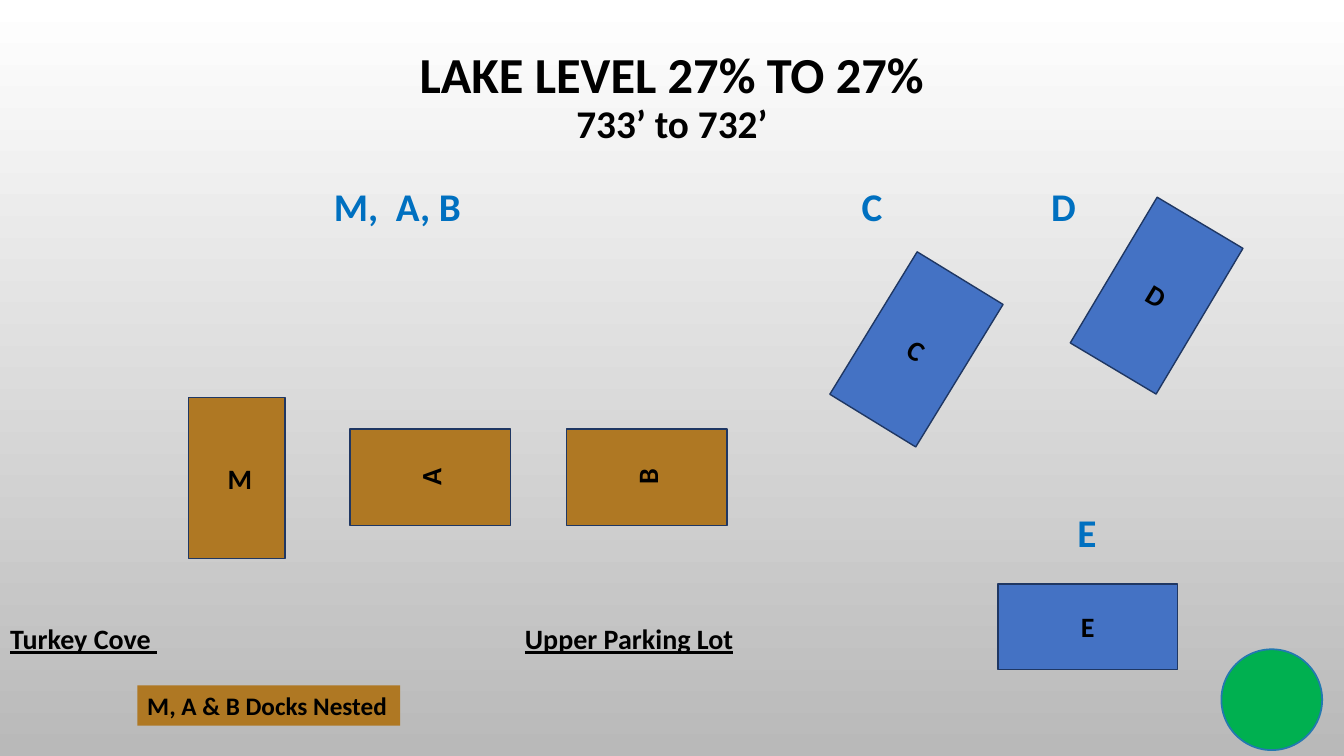
from pptx import Presentation
from pptx.dml.color import RGBColor
from pptx.enum.shapes import MSO_SHAPE as Form
from pptx.enum.text import MSO_ANCHOR as Anchor, PP_ALIGN as Align
from pptx.util import Inches, Pt

BLACK, BLUE, BROWN, DOCK, EDGE = "000000", "0070C0", "AF7823", "4472C4", "1F3763"


def paint(hue):
    return RGBColor.from_string(hue)


class Board:
    """Style and current slide; the grid has 160 columns and 90 rows."""

    font = "Calibri"
    cols, rows = 160, 90

    def __init__(self, deck):
        self.wide, self.high = deck.slide_width, deck.slide_height
        self.slide = deck.slides.add_slide(deck.slide_layouts[6])

    def area(self, x, y, w, h):
        """Box centred on column x and row y."""
        col, row = self.wide / self.cols, self.high / self.rows
        return [round(n) for n in
                ((x - w / 2) * col, (y - h / 2) * row, w * col, h * row)]

    def fade(self, top, low):
        fill = self.slide.background.fill
        fill.gradient()
        fill.gradient_angle = 270
        for stop, hue, pos in zip(fill.gradient_stops, (top, low), (0, 1)):
            stop.color.rgb = paint(hue)
            stop.position = pos

    def letter(self, shape, text, sizes, hue, align, under=False):
        frame = shape.text_frame
        frame.text = text
        frame.word_wrap = True
        frame.vertical_anchor = Anchor.MIDDLE
        para = frame.paragraphs[0]
        para.alignment = align
        for run, size in zip(para.runs, sizes):
            face = run.font
            face.name, face.size, face.bold = self.font, Pt(size), True
            face.underline = under
            face.color.rgb = paint(hue)
        return para

    def label(self, text, spot, sizes=(28,), hue=BLUE, align=Align.CENTER,
              under=False):
        box = self.slide.shapes.add_textbox(*self.area(*spot))
        frame = box.text_frame
        frame.margin_left = frame.margin_right = 0
        frame.margin_top = frame.margin_bottom = 0
        return self.letter(box, text, sizes, hue, align, under)

    def block(self, spot, fill, text="", size=20, turn=0, edge=EDGE, width=1,
              form=Form.RECTANGLE, align=Align.CENTER):
        shape = self.slide.shapes.add_shape(form, *self.area(*spot))
        shape.shadow.inherit = False
        shape.rotation = turn
        shape.fill.solid()
        shape.fill.fore_color.rgb = paint(fill)
        if edge:
            shape.line.color.rgb = paint(edge)
            shape.line.width = Pt(width)
        else:
            shape.line.fill.background()
        if text:
            self.letter(shape, text, (size,), BLACK, align)


def main():
    deck = Presentation()
    deck.slide_width, deck.slide_height = Inches(13.33), Inches(7.5)
    board = Board(deck)
    board.fade("FFFFFF", "B9B9B9")

    # Title with the lake levels
    title = board.label("LAKE LEVEL 27% TO 27%\v733’ to 732’",
                        (80, 11.7, 136, 15), (36, 28), BLACK)
    title.line_spacing = 0.9

    # Docks
    for name, x, y, w, h, turn, fill in (
            ("A", 51.2, 56.8, 11.5, 19.1, 270, BROWN),
            ("B", 77, 56.8, 11.5, 19.1, 270, BROWN),
            (" M", 28.2, 56.9, 11.5, 19.2, 0, BROWN),
            ("C", 109.1, 41.6, 12, 19.9, 31.5, DOCK),
            ("D", 137.7, 35.2, 11.9, 20.2, 30.8, DOCK),
            ("E", 129.5, 74.6, 21.4, 10.2, 0, DOCK)):
        board.block((x, y, w, h), fill, name, turn=turn)

    # Blue dock labels
    for name, x, y, w in (("M,  A, B", 47.3, 24.5, 24), ("C", 103.8, 24.5, 6),
                          ("D", 126.6, 24.5, 6), ("E", 129.4, 63.3, 6)):
        board.label(name, (x, y, w, 6))

    # Underlined places
    for name, x, w in (("Turkey Cove ", 10.2, 18), ("Upper Parking Lot", 75.5, 26)):
        board.label(name, (x, 76, w, 5), (20,), BLACK, Align.LEFT, True)

    # Nesting note and status light
    board.block((32, 84, 31.3, 4.8), BROWN, "M, A & B Docks Nested", 18,
                edge=None, align=Align.LEFT)
    board.block((151.4, 83.3, 12, 12), "00B050", edge="2379B0", width=1.25,
                form=Form.OVAL)

    deck.save("out.pptx")


if __name__ == "__main__":
    main()
